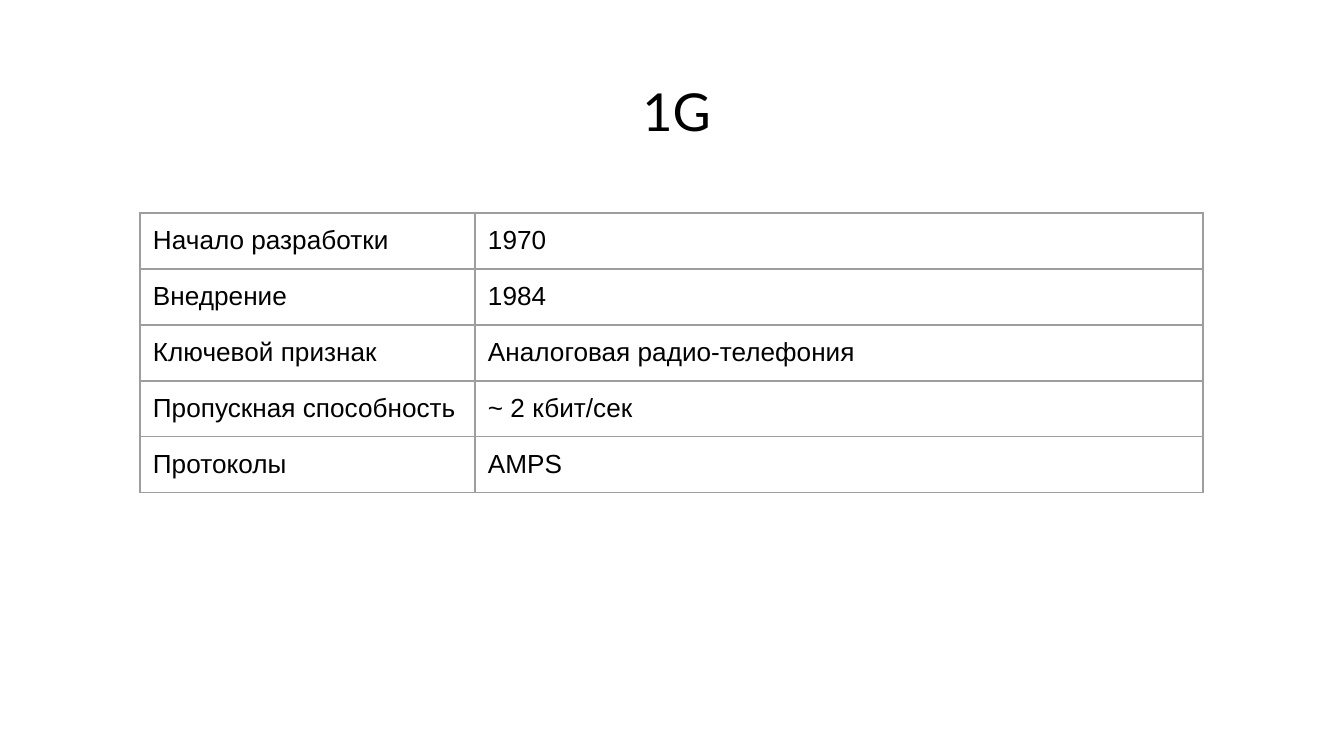
import dataclasses

import lxml.etree
import pptx
import pptx.dml.color
import pptx.enum.text
import pptx.oxml.ns
import pptx.util

SCALE = 914400 / 134.4  # EMU in one px


@dataclasses.dataclass(frozen=True)
class Theme:
    ink: str = "000000"
    rule: str = "9E9E9E"
    head_font: str = "Lato"
    body_font: str = "Arial"
    head_size: int = 28
    body_size: int = 14
    rule_width: float = 0.75
    inset: int = 13


@dataclasses.dataclass(frozen=True)
class Fact:
    label: str
    value: str


THEME = Theme()
FACTS = [
    Fact("Начало разработки", "1970"),
    Fact("Внедрение", "1984"),
    Fact("Ключевой признак", "Аналоговая радио-телефония"),
    Fact("Пропускная способность", "~ 2 кбит/сек"),
    Fact("Протоколы", "AMPS"),
]
WIDTHS = (335, 728)
ROW = 56


def px(count: int) -> pptx.util.Emu:
    return pptx.util.Emu(round(count * SCALE))


def style(frame, face: str, size: int) -> None:
    for run in frame.paragraphs[0].runs:
        run.font.name = face
        run.font.size = pptx.util.Pt(size)
        run.font.color.rgb = pptx.dml.color.RGBColor.from_string(THEME.ink)


def pad(box) -> None:
    box.margin_left = box.margin_right = px(THEME.inset)
    box.margin_top = box.margin_bottom = px(THEME.inset)


def frame_cell(cell) -> None:
    """Draw the four borders; they must come before the fill."""
    qn = pptx.oxml.ns.qn
    props = cell._tc.get_or_add_tcPr()
    for spot, side in enumerate(("lnL", "lnR", "lnT", "lnB")):
        line = lxml.etree.Element(qn(f"a:{side}"))
        line.set("w", str(pptx.util.Pt(THEME.rule_width)))
        fill = lxml.etree.SubElement(line, qn("a:solidFill"))
        lxml.etree.SubElement(fill, qn("a:srgbClr")).set("val", THEME.rule)
        props.insert(spot, line)


def draw_cell(cell, text: str) -> None:
    cell.text_frame.text = text
    style(cell.text_frame, THEME.body_font, THEME.body_size)
    pad(cell)
    cell.fill.background()
    frame_cell(cell)


def draw_title(slide, text: str) -> None:
    title = slide.shapes.title
    title.left, title.top, title.width, title.height = map(px, (54, 66, 1245, 85))
    frame = title.text_frame
    frame.text = text
    frame.auto_size = pptx.enum.text.MSO_AUTO_SIZE.NONE
    frame.vertical_anchor = pptx.enum.text.MSO_ANCHOR.TOP
    frame.paragraphs[0].alignment = pptx.enum.text.PP_ALIGN.CENTER
    pad(frame)
    style(frame, THEME.head_font, THEME.head_size)


def draw_table(slide, facts: list[Fact]) -> None:
    table = slide.shapes.add_table(
        len(facts), len(WIDTHS), px(140), px(213),
        px(sum(WIDTHS)), px(ROW * len(facts)),
    ).table
    table.first_row = table.horz_banding = False
    for column, width in zip(table.columns, WIDTHS):
        column.width = px(width)
    for row, fact in zip(table.rows, facts):
        row.height = px(ROW)
        for cell, text in zip(row.cells, (fact.label, fact.value)):
            draw_cell(cell, text)


def main() -> None:
    deck = pptx.Presentation()
    deck.slide_width, deck.slide_height = px(1344), px(756)
    slide = deck.slides.add_slide(deck.slide_layouts[5])

    # Heading
    draw_title(slide, "1G")

    # Facts about the generation
    draw_table(slide, FACTS)

    deck.save("out.pptx")


if __name__ == "__main__":
    main()
